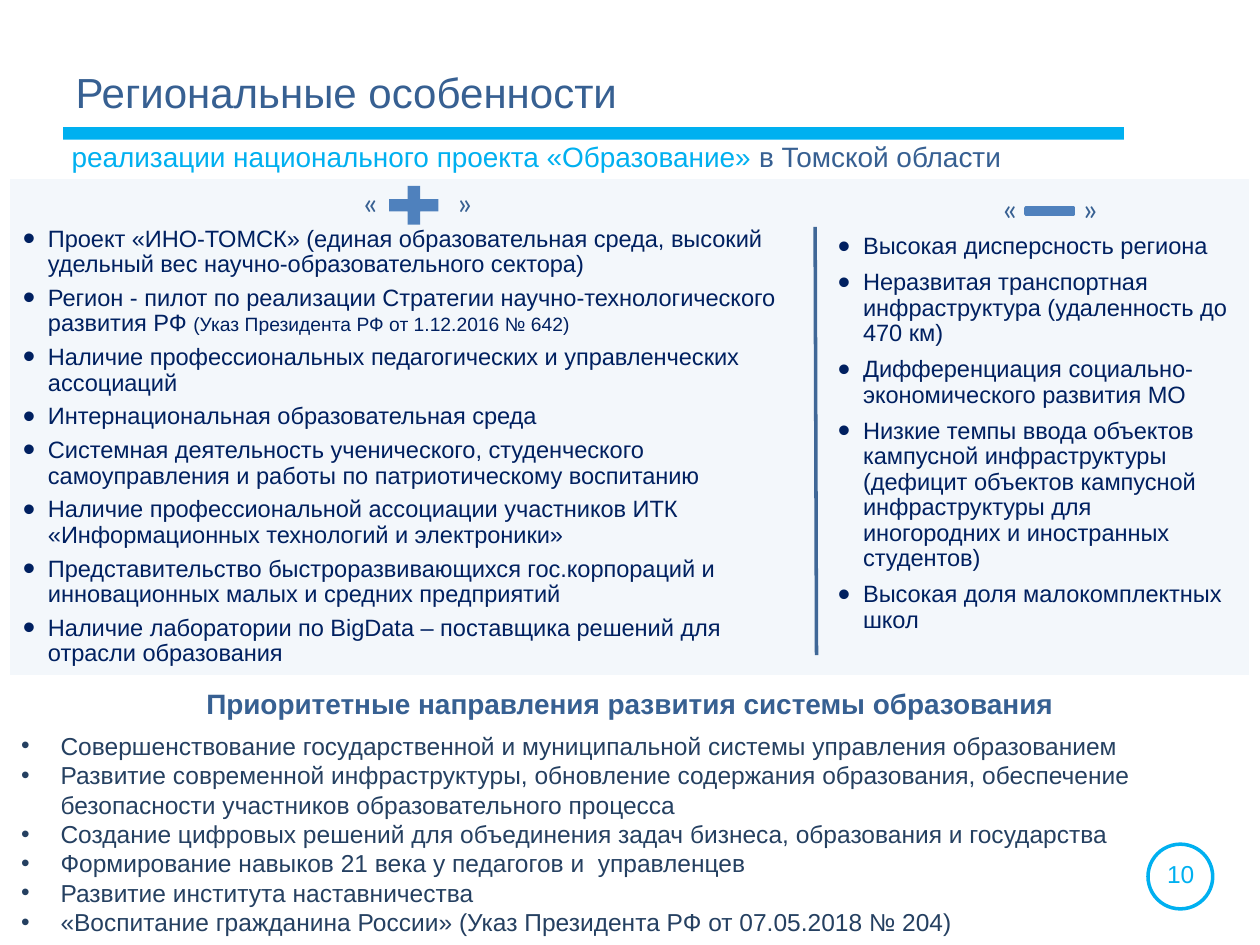
from lxml.etree import SubElement
from pptx import Presentation
from pptx.dml.color import RGBColor
from pptx.enum.shapes import MSO_CONNECTOR as CONNECTOR, MSO_SHAPE as SHAPE
from pptx.enum.text import MSO_ANCHOR as ANCHOR, PP_ALIGN as ALIGN
from pptx.oxml.ns import qn
from pptx.util import Pt

COLORS = {"cyan": "00B0F0", "blue": "376092", "navy": "002060", "slate": "254061",
          "panel": "F3F7FB", "white": "FFFFFF", "sign": "4F81BD", "divider": "3F6797"}


def add_shape(kind, box, fill=None, line=None):
    shape = slide.shapes.add_shape(kind, *map(Pt, box))
    shape.shadow.inherit = False
    if fill:
        shape.fill.solid()
        shape.fill.fore_color.rgb = RGBColor.from_string(COLORS[fill])
    else:
        shape.fill.background()
    if line:
        shape.line.color.rgb = RGBColor.from_string(COLORS[line])
        shape.line.width = Pt(2)
    else:
        shape.line.fill.background()


def add_text(shape, paragraphs, size, align=ALIGN.LEFT, font="Arial", bold=False,
             indent=0, bullet_size=100, line_spacing=None, space_after=0, inset=None):
    """Each paragraph is a list of runs: (text, color) or (text, color, own size)."""
    frame = shape.text_frame
    frame.word_wrap = True
    if inset is not None:
        frame.margin_left = frame.margin_top = Pt(inset)
        frame.margin_right = frame.margin_bottom = Pt(inset)
    for index, runs in enumerate(paragraphs):
        paragraph = frame.add_paragraph() if index else frame.paragraphs[0]
        paragraph.alignment = align
        paragraph.space_after = Pt(space_after)
        if line_spacing:
            paragraph.line_spacing = line_spacing
        if indent:
            properties = paragraph._p.get_or_add_pPr()
            properties.set("marL", str(Pt(indent)))
            properties.set("indent", str(-Pt(indent)))
            SubElement(properties, qn("a:buSzPct"), val=str(bullet_size * 1000))
            SubElement(properties, qn("a:buFont"), typeface="Arial")
            SubElement(properties, qn("a:buChar"), char="•")
        for text, color, *own_size in runs:
            run = paragraph.add_run()
            run.text = text
            run.font.name = font
            run.font.size = Pt(own_size[0] if own_size else size)
            run.font.bold = bold
            run.font.color.rgb = RGBColor.from_string(COLORS[color])


presentation = Presentation()
presentation.slide_width, presentation.slide_height = Pt(720), Pt(540)
slide = presentation.slides.add_slide(presentation.slide_layouts[5])

# Title bar, page number ring and background panel
add_shape(SHAPE.RECTANGLE, (36, 72.7, 606.2, 7.2), fill="cyan")
add_shape(SHAPE.OVAL, (656, 482.4, 37, 37), line="cyan")
add_shape(SHAPE.RECTANGLE, (5, 101.5, 710, 285), fill="panel", line="white")

# Title
title = slide.shapes.title
title.left, title.top, title.width, title.height = map(Pt, (36, 31, 561, 46))
title.text_frame.vertical_anchor = ANCHOR.MIDDLE
add_text(title, [[("Региональные особенности", "blue")]], 24, line_spacing=0.9)

# Page number, subtitle and heading of the priorities
for box, runs, size, align, bold in [
    ((653.8, 487.4, 41.8, 24.5), [("10", "cyan")], 14, ALIGN.CENTER, False),
    ((33.8, 76.3, 616, 50), [("реализации национального проекта «Образование» ", "cyan"),
                             ("в Томской области", "blue")], 16, ALIGN.LEFT, False),
    ((0, 388.8, 720, 26.6), [("Приоритетные направления развития системы образования", "blue")],
     16, ALIGN.CENTER, True),
]:
    add_text(slide.shapes.add_textbox(*map(Pt, box)), [runs], size, align, bold=bold)

# Priorities
priorities = [
    "Совершенствование государственной и муниципальной системы управления образованием",
    "Развитие современной инфраструктуры, обновление содержания образования, "
    "обеспечение безопасности участников образовательного процесса",
    "Создание цифровых решений для объединения задач бизнеса, образования и государства",
    "Формирование навыков 21 века у педагогов и  управленцев",
    "Развитие института наставничества",
    "«Воспитание гражданина России» (Указ Президента РФ от 07.05.2018 № 204)",
]
add_text(slide.shapes.add_textbox(Pt(5), Pt(414), Pt(711), Pt(126)),
         [[(text, "slate")] for text in priorities], 14, indent=22.5)

# Strengths and weaknesses
strengths = [
    "Проект «ИНО-ТОМСК» (единая образовательная среда, высокий удельный вес "
    "научно-образовательного сектора)",
    "Регион - пилот по реализации Стратегии научно-технологического развития РФ ",
    "Наличие профессиональных педагогических и управленческих ассоциаций",
    "Интернациональная образовательная среда",
    "Системная деятельность ученического, студенческого самоуправления и работы "
    "по патриотическому воспитанию",
    "Наличие профессиональной ассоциации участников ИТК «Информационных технологий "
    "и электроники»",
    "Представительство быстроразвивающихся гос.корпораций и инновационных малых "
    "и средних предприятий",
    "Наличие лаборатории по BigDatа – поставщика решений для отрасли образования",
]
weaknesses = [
    "Высокая дисперсность региона",
    "Неразвитая транспортная инфраструктура (удаленность до 470 км)",
    "Дифференциация социально-экономического развития МО",
    "Низкие темпы ввода объектов кампусной инфраструктуры (дефицит объектов "
    "кампусной инфраструктуры для иногородних и иностранных студентов)",
    "Высокая доля малокомплектных школ",
]
strength_runs = [[(text, "navy")] for text in strengths]
strength_runs[1].append(("(Указ Президента РФ от 1.12.2016 № 642)", "navy", 11))
weakness_runs = [[(text, "navy")] for text in weaknesses]
for box, paragraphs, space_after in [
    ((10.8, 127.4, 447, 291.6), strength_runs, 4.7),
    ((476.6, 131.8, 229, 257.8), weakness_runs, 6),
]:
    add_text(slide.shapes.add_textbox(*map(Pt, box)), paragraphs, 13.5, indent=14.4,
             bullet_size=150, line_spacing=0.9, space_after=space_after, inset=2.2)

# Divider between the columns
divider = slide.shapes.add_connector(CONNECTOR.STRAIGHT, Pt(465.8), Pt(129.6), Pt(466.6), Pt(374.4))
divider.line.color.rgb = RGBColor.from_string(COLORS["divider"])
divider.line.width = Pt(2)
SubElement(divider._element.spPr, qn("a:effectLst"))

# Plus and minus signs in quotation marks
for mark, center, top in [("«", 211.5, 100.8), ("»", 265.5, 100.8),
                          ("«", 577, 104.4), ("»", 623, 104.4)]:
    box = slide.shapes.add_textbox(Pt(center - 12), Pt(top + 3.6), Pt(24), Pt(22))
    add_text(box, [[(mark, "blue")]], 18, ALIGN.CENTER, font="Calibri", inset=0)
add_shape(SHAPE.MATH_PLUS, (217.4, 102.2, 38.2, 30.2), fill="sign")
add_shape(SHAPE.RECTANGLE, (586.1, 118.8, 27.4, 3.6), fill="sign", line="sign")

presentation.save("out.pptx")
